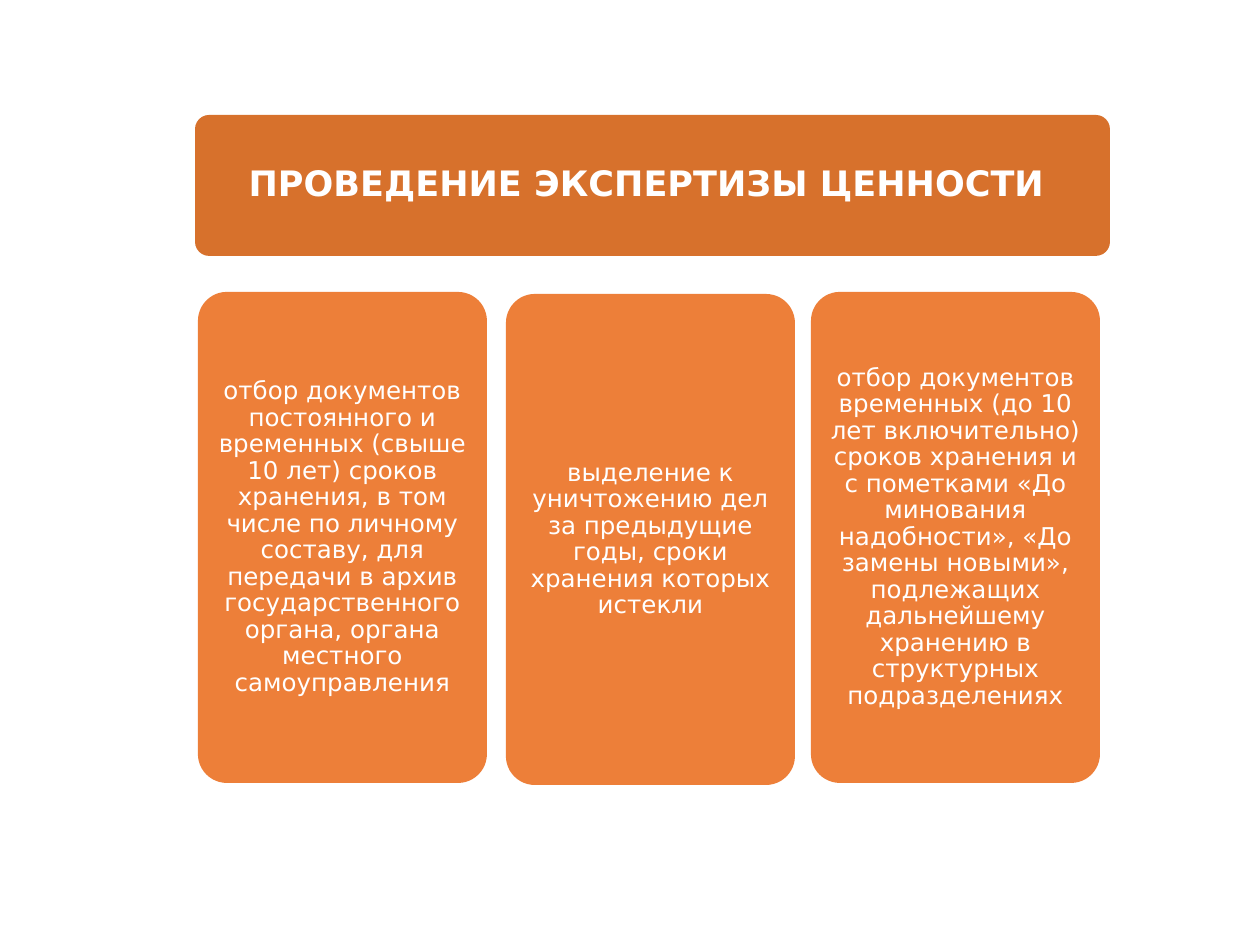
from pptx import Presentation
from pptx.dml.color import RGBColor
from pptx.enum.shapes import MSO_SHAPE
from pptx.enum.text import MSO_ANCHOR, PP_ALIGN
from pptx.util import Emu, Pt

WHITE = RGBColor(0xFF, 0xFF, 0xFF)
DARK_ORANGE = RGBColor(0xD7, 0x71, 0x2C)
ORANGE = RGBColor(0xED, 0x7F, 0x39)
FONT = "DejaVu Sans"


def px(value):
    """Convert pixels, 126 to the inch, into EMU."""
    return Emu(round(value * 914400 / 126))


def add_card(slide, box, text, color, size, margin, bold=False):
    shape = slide.shapes.add_shape(
        MSO_SHAPE.ROUNDED_RECTANGLE, *[px(value) for value in box])
    shape.adjustments[0] = 0.1
    shape.shadow.inherit = False
    shape.fill.solid()
    shape.fill.fore_color.rgb = color
    shape.line.fill.background()

    frame = shape.text_frame
    frame.word_wrap = True
    frame.vertical_anchor = MSO_ANCHOR.MIDDLE
    frame.margin_left = frame.margin_right = px(margin)
    frame.margin_top = frame.margin_bottom = px(margin)

    paragraph = frame.paragraphs[0]
    paragraph.text = text
    paragraph.alignment = PP_ALIGN.CENTER
    paragraph.line_spacing = 0.9
    paragraph.font.name = FONT
    paragraph.font.size = Pt(size)
    paragraph.font.bold = bold
    paragraph.font.color.rgb = WHITE


presentation = Presentation()
presentation.slide_width = px(1260)
presentation.slide_height = px(945)
slide = presentation.slides.add_slide(presentation.slide_layouts[6])

add_card(slide, (195, 115, 915, 141), "ПРОВЕДЕНИЕ ЭКСПЕРТИЗЫ ЦЕННОСТИ ",
         DARK_ORANGE, size=20, margin=10, bold=True)

COLUMN_WIDTH, COLUMN_HEIGHT = 289, 491
columns = [
    (198, 292, "отбор документов постоянного и временных (свыше 10 лет) "
               "сроков хранения, в том числе по личному составу, для передачи "
               "в архив государственного органа, органа местного "
               "самоуправления"),
    (506, 294, "выделение к уничтожению дел за предыдущие годы, сроки "
               "хранения которых истекли"),
    (811, 292, "отбор документов временных (до 10 лет включительно) сроков "
               "хранения и с пометками «До минования надобности», «До замены "
               "новыми», подлежащих дальнейшему хранению в структурных "
               "подразделениях"),
]
for left, top, text in columns:
    add_card(slide, (left, top, COLUMN_WIDTH, COLUMN_HEIGHT), text,
             ORANGE, size=14, margin=8)

presentation.save("out.pptx")
